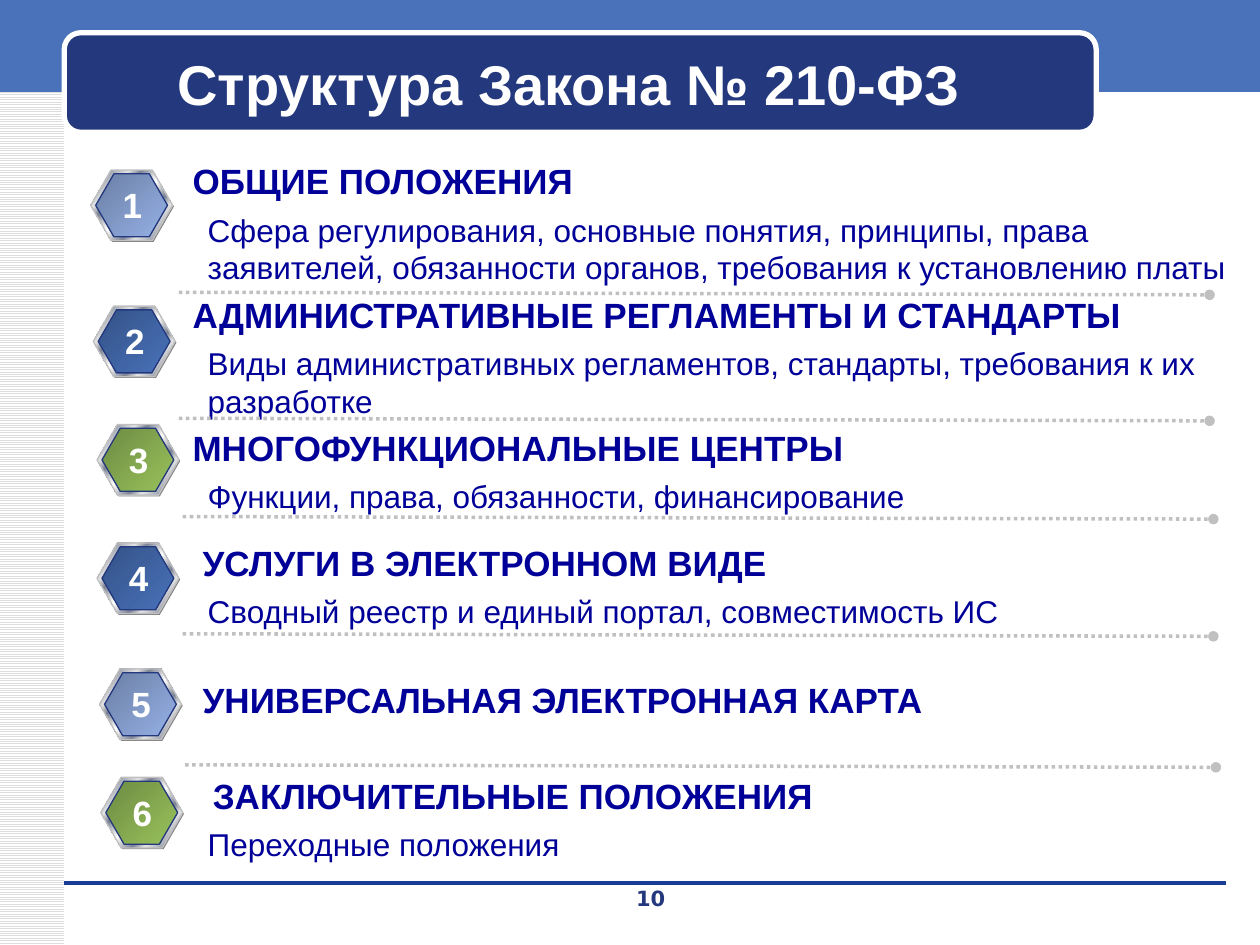
from dataclasses import dataclass

from lxml.etree import SubElement
from pptx import Presentation
from pptx.dml.color import RGBColor
from pptx.enum.dml import MSO_LINE_DASH_STYLE as Dash, MSO_PATTERN_TYPE as Pattern
from pptx.enum.shapes import MSO_CONNECTOR_TYPE as Connector, MSO_SHAPE as Shape
from pptx.enum.text import MSO_ANCHOR as Anchor, PP_ALIGN as Align
from pptx.oxml.ns import qn
from pptx.util import Inches, Pt


@dataclass(frozen=True)
class Theme:
    font: str = "Arial"
    number_font: str = "DejaVu Sans"
    title_size: int = 32
    heading_size: int = 20
    detail_size: int = 18
    page_size: int = 12
    white: str = "FFFFFF"
    navy: str = "23387D"
    band: str = "4972BB"
    text: str = "000099"
    silver: str = "C0C0C0"
    stripe: str = "DDDDDD"
    footer: str = "1A3D97"
    shade: str = "808080"
    steel: tuple = ((0, "E6E6E6"), (8, "7D8496"), (26, "E6E6E6"), (34, "7D8496"),
                    (46, "E6E6E6"), (50, "FFFFFF"), (54, "E6E6E6"), (66, "7D8496"),
                    (74, "E6E6E6"), (92, "7D8496"), (100, "E6E6E6"))
    faces: tuple = (((0, "6B7FA5"), (100, "96B1E6")),
                    ((0, "345286"), (100, "4972BB")),
                    ((0, "6D8B42"), (100, "99C25C")))


THEME = Theme()


@dataclass(frozen=True)
class Section:
    heading: str
    detail: str
    badge: tuple        # left, top in inches
    face: int           # index into THEME.faces
    indent: float       # heading indent in inches
    before: float       # points above the heading
    rule: tuple = None  # start of the dotted line below


SECTIONS = (
    Section("ОБЩИЕ ПОЛОЖЕНИЯ",
            "Сфера регулирования, основные понятия, принципы, права заявителей, "
            "обязанности органов, требования к установлению платы",
            (0.72, 1.35), 0, 0.26, 0, (1.42, 2.32)),
    Section("АДМИНИСТРАТИВНЫЕ РЕГЛАМЕНТЫ И СТАНДАРТЫ",
            "Виды административных регламентов, стандарты, требования к их разработке",
            (0.74, 2.43), 1, 0.26, 3.9, (1.42, 3.32)),
    Section("МНОГОФУНКЦИОНАЛЬНЫЕ ЦЕНТРЫ",
            "Функции, права, обязанности, финансирование",
            (0.77, 3.37), 2, 0.26, 3.9, (1.45, 4.1)),
    Section("УСЛУГИ В ЭЛЕКТРОННОМ ВИДЕ",
            "Сводный реестр и единый портал, совместимость ИС",
            (0.77, 4.31), 1, 0.34, 15, (1.45, 5.03)),
    Section("УНИВЕРСАЛЬНАЯ ЭЛЕКТРОННАЯ КАРТА", "",
            (0.79, 5.31), 0, 0.34, 27.9, (1.47, 6.07)),
    Section("ЗАКЛЮЧИТЕЛЬНЫЕ ПОЛОЖЕНИЯ", "Переходные положения",
            (0.8, 6.17), 2, 0.42, 30.7),
)


def color(value):
    return RGBColor.from_string(value)


def add_block(shapes, kind, left, top, width, height, fill=None, line=None, weight=0.75):
    block = shapes.add_shape(kind, Inches(left), Inches(top), Inches(width), Inches(height))
    block.shadow.inherit = False
    if fill:
        block.fill.solid()
        block.fill.fore_color.rgb = color(fill)
    if line:
        block.line.color.rgb = color(line)
        block.line.width = Pt(weight)
    else:
        block.line.fill.background()
    return block


def fill_gradient(shape, stops):
    """Fill diagonally, from top left to bottom right, with any number of stops."""
    shape.fill.gradient()
    shape.fill.gradient_angle = 315
    stop_list = shape._element.spPr.find(qn("a:gradFill")).find(qn("a:gsLst"))
    for old in list(stop_list):
        stop_list.remove(old)
    for position, value in stops:
        stop = SubElement(stop_list, qn("a:gs"), pos=str(position * 1000))
        SubElement(stop, qn("a:srgbClr"), val=value)


def add_line(page, start, end, value, weight):
    line = page.shapes.add_connector(
        Connector.STRAIGHT, *(Inches(length) for length in (*start, *end)))
    line.line.color.rgb = color(value)
    line.line.width = Pt(weight)
    SubElement(line._element.spPr, qn("a:effectLst"))
    return line


def add_rule(page, left, top):
    """Dotted divider that ends in a round dot."""
    rule = add_line(page, (left, top), (left + 8.18, top + 0.02), THEME.silver, 2)
    rule.line.dash_style = Dash.ROUND_DOT
    SubElement(rule.line._get_or_add_ln(), qn("a:tailEnd"), type="oval")


def style(para, size, value, bold=False, font=THEME.font):
    para.font.name = font
    para.font.size = Pt(size)
    para.font.bold = bold
    para.font.color.rgb = color(value)


def add_box(page, left, top, width, height, wrap=True):
    box = page.shapes.add_textbox(Inches(left), Inches(top), Inches(width), Inches(height))
    box.text_frame.word_wrap = wrap
    return box.text_frame


def add_label(page, text, place, size, value, font=THEME.font, wrap=True, anchor=Anchor.TOP):
    frame = add_box(page, *place, wrap=wrap)
    frame.vertical_anchor = anchor
    para = frame.paragraphs[0]
    para.text = text
    para.alignment = Align.CENTER
    style(para, size, value, bold=True, font=font)


def add_badge(page, number, section):
    left, top = section.badge
    group = page.shapes.add_group_shape()
    shade = add_block(group.shapes, Shape.HEXAGON, left + 0.01, top + 0.01, 0.65, 0.56,
                      THEME.shade)
    rim = add_block(group.shapes, Shape.HEXAGON, left, top, 0.65, 0.56, line=THEME.silver)
    face = add_block(group.shapes, Shape.HEXAGON, left + 0.04, top + 0.03, 0.57, 0.5,
                     line=THEME.navy)
    fill_gradient(rim, THEME.steel)
    fill_gradient(face, THEME.faces[section.face])
    for hexagon in (shade, rim, face):
        hexagon.adjustments[0] = 0.289
        hexagon.adjustments[1] = 1.155
    add_label(page, str(number), (left + 0.15, top + 0.06, 0.36, 0.44),
              THEME.heading_size, THEME.white, wrap=False)


def add_contents(page):
    frame = add_box(page, 1.17, 1.22, 8.79, 5.74)

    def add_para(text, size, indent, before, bold):
        para = frame.add_paragraph() if frame.text else frame.paragraphs[0]
        para.text = text
        para._p.get_or_add_pPr().set("marL", str(Inches(indent)))
        if before:
            para.space_before = Pt(before)
        style(para, size, THEME.text, bold)

    for section in SECTIONS:
        add_para(section.heading, THEME.heading_size, section.indent, section.before, True)
        if section.detail:
            add_para(section.detail, THEME.detail_size, 0.38, 5, False)


def add_frame(page):
    sidebar = add_block(page.shapes, Shape.RECTANGLE, 0, 0, 0.51, 7.5)
    sidebar.fill.patterned()
    sidebar.fill.pattern = Pattern.LIGHT_HORIZONTAL
    sidebar.fill.fore_color.rgb = color(THEME.stripe)
    sidebar.fill.back_color.rgb = color(THEME.white)
    add_block(page.shapes, Shape.RECTANGLE, 0, -0.03, 10, 0.76, THEME.band)
    add_line(page, (0.51, 7.01), (9.73, 7.01), THEME.footer, 0)
    add_block(page.shapes, Shape.ROUNDED_RECTANGLE, 0.51, 0.26, 8.19, 0.79,
              THEME.navy, THEME.white, 3)


def main():
    deck = Presentation()
    deck.slide_width, deck.slide_height = Inches(10), Inches(7.5)
    page = deck.slides.add_slide(deck.slide_layouts[6])
    add_frame(page)
    add_label(page, "Структура Закона № 210-ФЗ", (0.6, 0.35, 7.83, 0.62),
              THEME.title_size, THEME.white, anchor=Anchor.MIDDLE)
    add_contents(page)
    for number, section in enumerate(SECTIONS, 1):
        add_badge(page, number, section)
        if section.rule:
            add_rule(page, *section.rule)
    add_label(page, "10", (4, 6.98, 2.33, 0.23), THEME.page_size, THEME.navy,
              font=THEME.number_font)
    deck.save("out.pptx")


if __name__ == "__main__":
    main()
